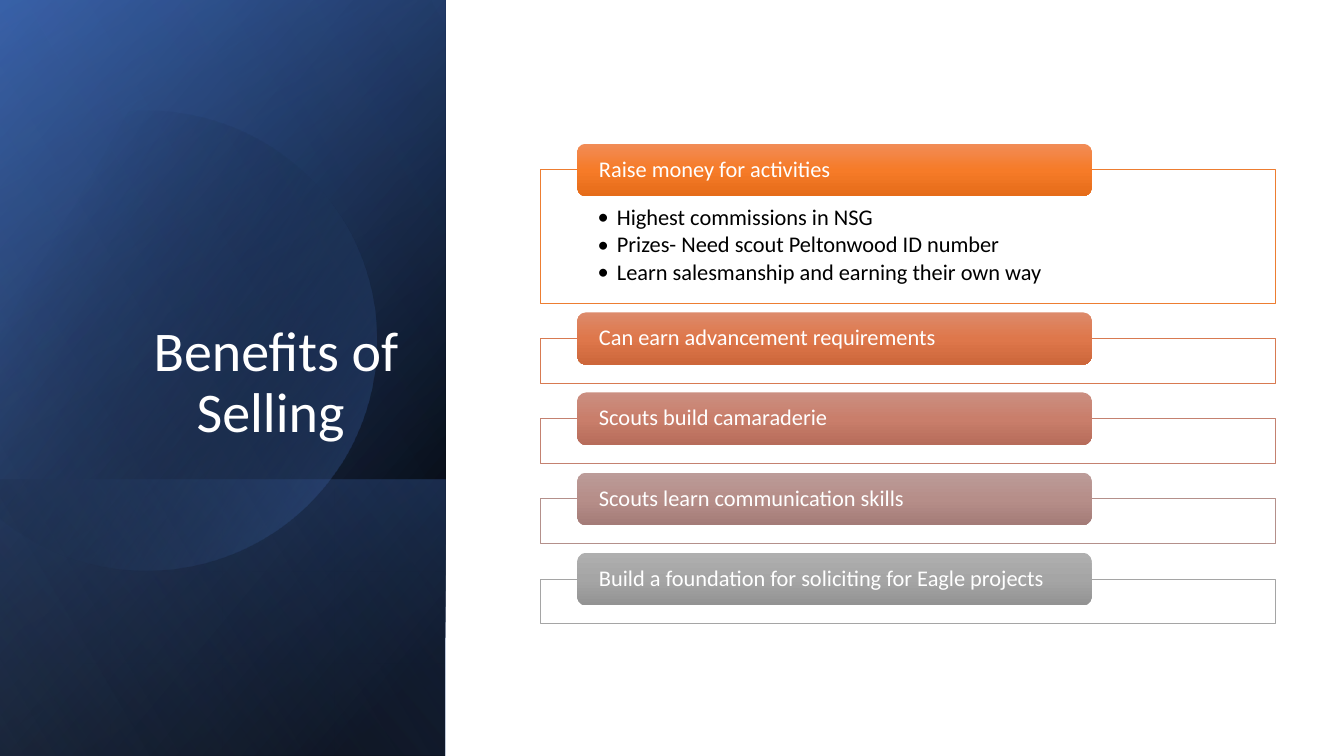
import pptx
import pptx.dml.color
import pptx.enum.shapes
import pptx.enum.text
import pptx.oxml
import pptx.oxml.ns
import pptx.util

RGB = pptx.dml.color.RGBColor.from_string
ALIGN = pptx.enum.text.PP_ALIGN
ANCHOR = pptx.enum.text.MSO_ANCHOR
SHAPE = pptx.enum.shapes.MSO_SHAPE
qn = pptx.oxml.ns.qn
NAMESPACE = pptx.oxml.ns.nsdecls("a")

SLIDE_WIDTH = pptx.util.Inches(13.33)
SLIDE_HEIGHT = pptx.util.Inches(7.5)
FONT = "Calibri"

WHITE, BLACK = RGB("FFFFFF"), RGB("000000")
NAVY, BLUE, PALE_BLUE = RGB("2F5597"), RGB("4472C4"), RGB("8FAADC")

# Grid, as percentages of the slide's width or height
PANEL_WIDTH = 33.15
FRAME_LEFT, FRAME_WIDTH = 40.2, 54.7
HEADER_LEFT, HEADER_WIDTH, HEADER_HEIGHT = 42.95, 38.28, 6.94
LIST_TOP, ROW_GAP = 19, 1.2
EMPTY_FRAME, FULL_FRAME = 5.93, 17.65

# Heading, frame line, three header gradient colours, bullets
BENEFITS = [
    ("Raise money for activities", RGB("ED7D31"),
     (RGB("F18C57"), RGB("F67B28"), RGB("E56C19")),
     ["Highest commissions in NSG",
      "Prizes- Need scout Peltonwood ID number",
      "Learn salesmanship and earning their own way"]),
    ("Can earn advancement requirements", RGB("D87A51"),
     (RGB("DD8A6A"), RGB("DE774B"), RGB("CD673B")), []),
    ("Scouts build camaraderie", RGB("C48170"),
     (RGB("CB8F81"), RGB("C97E6B"), RGB("B76D5B")), []),
    ("Scouts learn communication skills", RGB("B4908B"),
     (RGB("BC9C99"), RGB("B68E89"), RGB("A47C78")), []),
    ("Build a foundation for soliciting for Eagle projects", RGB("A5A5A5"),
     (RGB("AFAFAF"), RGB("A5A5A5"), RGB("939393")), []),
]


def across(percent):
    return round(SLIDE_WIDTH * percent / 100)


def down(percent):
    return round(SLIDE_HEIGHT * percent / 100)


def fill_gradient(shape, stops, angle):
    """Fill with stops of (position, colour, opacity), all in percent."""
    shape.fill.gradient()
    stop_xml = "".join(
        f'<a:gs pos="{position * 1000}"><a:srgbClr val="{color}">'
        f'<a:alpha val="{opacity * 1000}"/></a:srgbClr></a:gs>'
        for position, color, opacity in stops)
    gradient = pptx.oxml.parse_xml(
        f'<a:gradFill {NAMESPACE} rotWithShape="1">'
        f'<a:gsLst>{stop_xml}</a:gsLst>'
        f'<a:lin ang="{angle * 60000}" scaled="0"/></a:gradFill>')
    properties = shape.element.spPr
    properties.replace(properties.find(qn("a:gradFill")), gradient)


def write_text(shape, lines, size=16, color=WHITE, align=ALIGN.LEFT,
               anchor=ANCHOR.MIDDLE, margins=(0.1, 0.05, 0.1, 0.05),
               space_after=0, bullet_indent=None, tab_stop=None):
    frame = shape.text_frame
    frame.word_wrap = True
    frame.auto_size = pptx.enum.text.MSO_AUTO_SIZE.NONE
    frame.vertical_anchor = anchor
    (frame.margin_left, frame.margin_top,
     frame.margin_right, frame.margin_bottom) = map(pptx.util.Inches, margins)
    for index, line in enumerate(lines):
        paragraph = frame.add_paragraph() if index else frame.paragraphs[0]
        paragraph.alignment = align
        paragraph.line_spacing = 0.9
        paragraph.space_before = pptx.util.Pt(0)
        paragraph.space_after = pptx.util.Pt(space_after)
        run = paragraph.add_run()
        run.text = line
        run.font.name = FONT
        run.font.size = pptx.util.Pt(size)
        run.font.color.rgb = color
        properties = paragraph._p.get_or_add_pPr()
        if bullet_indent:
            paragraph.level = 1
            indent = pptx.util.Inches(bullet_indent)
            properties.set("marL", str(indent))
            properties.set("indent", str(-indent))
            properties.append(pptx.oxml.parse_xml(
                f'<a:buFont {NAMESPACE} typeface="{FONT}"/>'))
            properties.append(pptx.oxml.parse_xml(
                f'<a:buChar {NAMESPACE} char="•"/>'))
        if tab_stop:
            properties.append(pptx.oxml.parse_xml(
                f'<a:tabLst {NAMESPACE}><a:tab algn="l" '
                f'pos="{pptx.util.Inches(tab_stop)}"/></a:tabLst>'))


def add_box(slide, kind, left, top, width, height):
    shape = slide.shapes.add_shape(kind, left, top, width, height)
    shape.shadow.inherit = False
    shape.line.fill.background()
    return shape


def add_panel_layer(slide, stops, angle, top=0, height=100):
    """Left-aligned layer, turned a quarter and mirrored."""
    length, breadth = down(height), across(PANEL_WIDTH)
    shape = add_box(slide, SHAPE.RECTANGLE, (breadth - length) // 2,
                    down(top) + (length - breadth) // 2, length, breadth)
    shape.rotation = 90
    shape.element.spPr.find(qn("a:xfrm")).set("flipH", "1")
    fill_gradient(shape, stops, angle)


def add_cut_circle(slide):
    """Circle whose left part is cut by a vertical edge."""
    diameter = across(34.25)
    shape = add_box(slide, SHAPE.CHORD, across(-6.25), down(14.6),
                    diameter, diameter)
    for index, degrees in enumerate((225, 135)):
        shape.adjustments[index] = degrees * 0.6
    fill_gradient(shape, [(29, BLACK, 0), (100, BLUE, 43)], 30)


def add_title(slide, text):
    title = slide.shapes.title
    title.left, title.top = across(4.8), down(24.5)
    title.width, title.height = across(25.58), down(34.93)
    write_text(title, [text], size=40, align=ALIGN.RIGHT, anchor=ANCHOR.BOTTOM,
               tab_stop=2)
    title.element.getparent().append(title.element)  # in front of the panel


def add_benefit(slide, top, heading, line_color, colors, bullets):
    """Draw one framed row and return its bottom edge."""
    frame_top = top + HEADER_HEIGHT / 2
    frame_height = FULL_FRAME if bullets else EMPTY_FRAME
    frame = add_box(slide, SHAPE.RECTANGLE, across(FRAME_LEFT), down(frame_top),
                    across(FRAME_WIDTH), down(frame_height))
    frame.fill.solid()
    frame.fill.fore_color.rgb = WHITE
    frame.line.color.rgb = line_color
    frame.line.width = pptx.util.Pt(0.5)
    if bullets:
        write_text(frame, bullets, color=BLACK, anchor=ANCHOR.TOP,
                   margins=(0.57, 0.36, 0.57, 0.12), space_after=2.4,
                   bullet_indent=0.19)
    header = add_box(slide, SHAPE.ROUNDED_RECTANGLE, across(HEADER_LEFT), down(top),
                     across(HEADER_WIDTH), down(HEADER_HEIGHT))
    fill_gradient(header, [(50 * index, color, 100)
                           for index, color in enumerate(colors)], 90)
    write_text(header, [heading], margins=(0.19, 0, 0.19, 0))
    return frame_top + frame_height


def main():
    presentation = pptx.Presentation()
    presentation.slide_width = SLIDE_WIDTH
    presentation.slide_height = SLIDE_HEIGHT
    slide = presentation.slides.add_slide(presentation.slide_layouts[5])

    # Blue panel with the title
    add_panel_layer(slide, [(8, BLACK, 100), (100, NAVY, 100)], 50)
    add_panel_layer(slide, [(0, BLACK, 0), (99, BLUE, 46)], 30)
    add_panel_layer(slide, [(2, BLUE, 29), (100, BLACK, 30)], 130,
                    top=63.47, height=36.53)
    add_cut_circle(slide)
    add_panel_layer(slide, [(0, BLACK, 0), (99, PALE_BLUE, 11)], 120)
    add_title(slide, "Benefits of Selling\t")

    # Benefits list
    top = LIST_TOP
    for benefit in BENEFITS:
        top = add_benefit(slide, top, *benefit) + ROW_GAP

    presentation.save("out.pptx")


if __name__ == "__main__":
    main()
